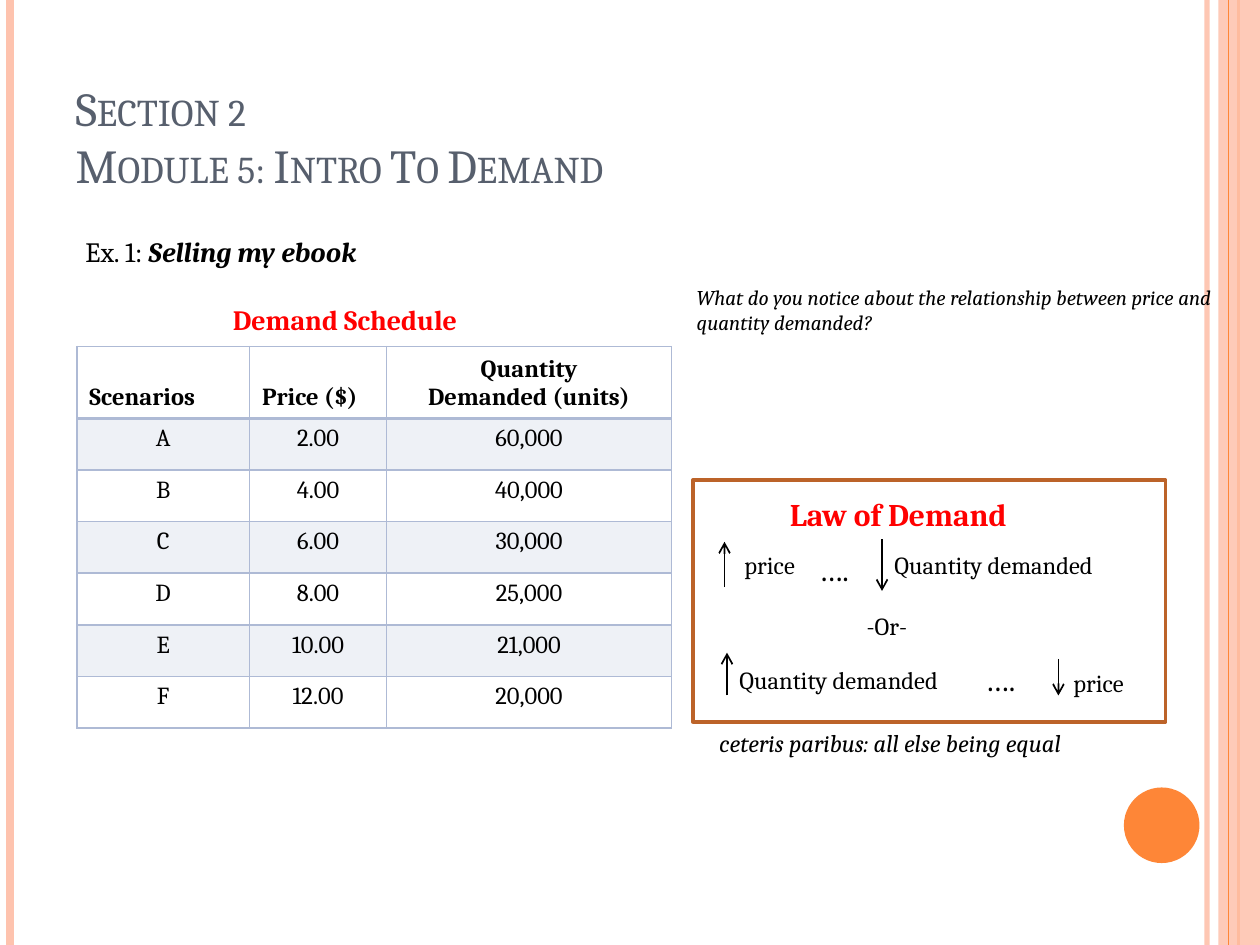
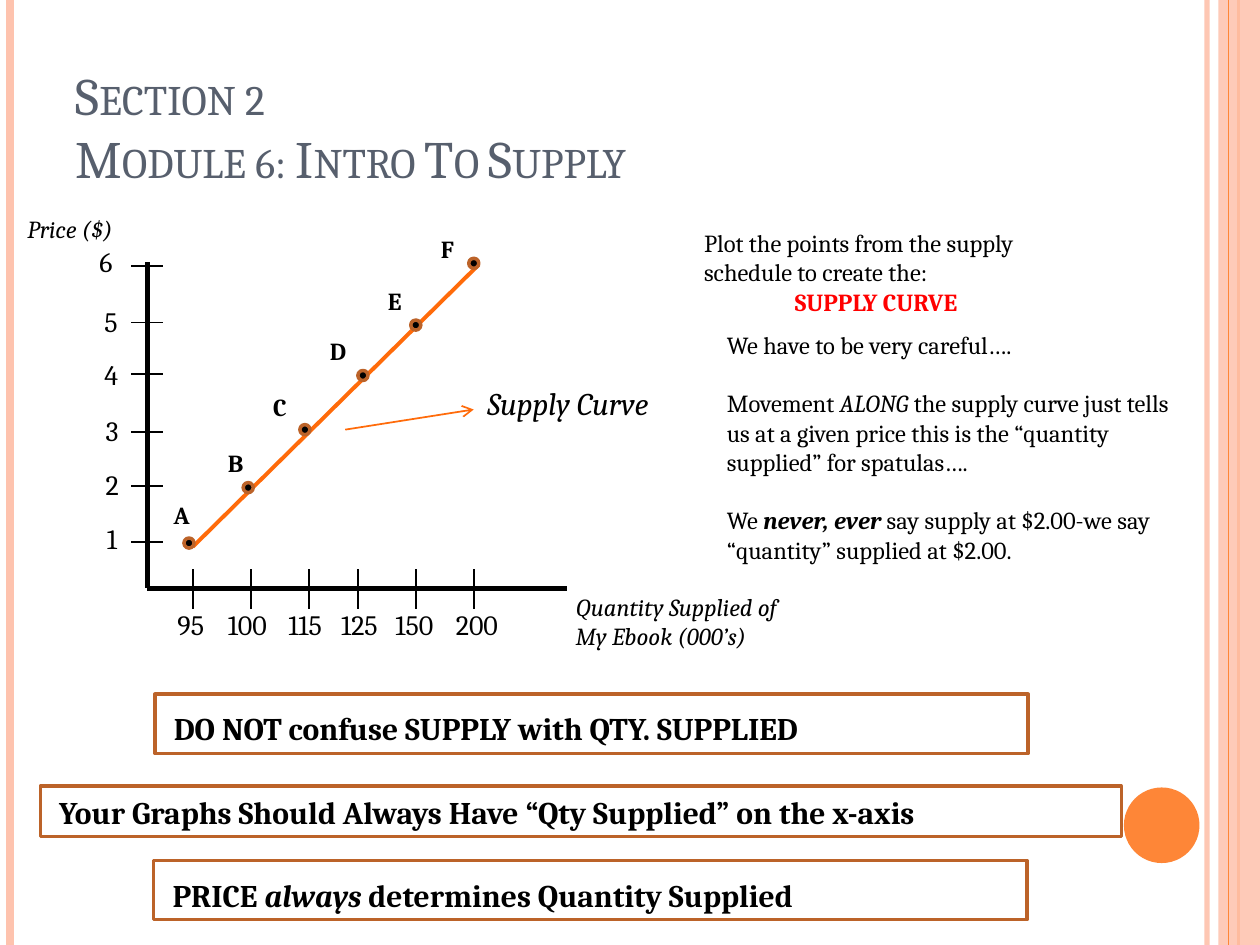
from lxml import etree
from pptx import Presentation
from pptx.dml.color import RGBColor
from pptx.enum.shapes import MSO_CONNECTOR, MSO_SHAPE
from pptx.enum.text import MSO_ANCHOR, MSO_AUTO_SIZE, PP_ALIGN
from pptx.oxml.ns import qn
from pptx.util import Inches, Pt

STRAIGHT = MSO_CONNECTOR.STRAIGHT
RECT, OVAL = MSO_SHAPE.RECTANGLE, MSO_SHAPE.OVAL
TOP, BOTTOM = MSO_ANCHOR.TOP, MSO_ANCHOR.BOTTOM
LEFT, CENTER = PP_ALIGN.LEFT, PP_ALIGN.CENTER
FIT, NO_FIT = MSO_AUTO_SIZE.SHAPE_TO_FIT_TEXT, MSO_AUTO_SIZE.NONE

FONT = "Cambria"
BLACK, RED, SLATE = "000000", "FF0000", "575F6D"
PEACH, ORANGE, CURVE, BROWN = "FEC3AE", "FE8637", "FF6B0A", "BC6329"
GRID = "AEBAD5"

SCHEDULE = [
    ("A", "2.00", "60,000"),
    ("B", "4.00", "40,000"),
    ("C", "6.00", "30,000"),
    ("D", "8.00", "25,000"),
    ("E", "10.00", "21,000"),
    ("F", "12.00", "20,000"),
]
# Offsets are measured right of and up from the corner of the axes.
POINTS = [("A", 0.33, 0.36, 0.11, 0.75), ("B", 0.8, 0.8, 0.54, 1.16),
          ("C", 1.25, 1.26, 0.9, 1.61), ("D", 1.71, 1.69, 1.35, 2.05),
          ("E", 2.13, 2.09, 1.81, 2.45), ("F", 2.59, 2.58, 2.23, 2.86)]
PRICE_TICKS = [("1", 0.37, -0.42, 0.58), ("2", 0.81, -0.43, 1.01),
               ("3", 1.24, -0.43, 1.44), ("4", 1.7, -0.44, 1.88),
               ("5", 2.11, -0.44, 2.3), ("6", 2.56, -0.48, 2.78)]
QTY_TICKS = [("95", 0.36, 0.14), ("100", 0.82, 0.54), ("115", 1.28, 1.02),
             ("125", 1.67, 1.44), ("150", 2.13, 1.87), ("200", 2.59, 2.35)]


def rgb(color):
    """Turn a hex string into a colour."""
    return RGBColor.from_string(color)


def fade(parent, percent):
    """Set the opacity of the solid fill directly inside an element."""
    color = parent.find(qn("a:solidFill"))[0]
    etree.SubElement(color, qn("a:alpha"), val=str(percent * 1000))


def write(tf, paras, size=14, color=BLACK, bold=False, italic=False,
          align=LEFT, gap=0, small=False):
    """Fill a text frame; a run is a string or a (string, format) pair."""
    for i, runs in enumerate(paras):
        p = tf.paragraphs[0] if i == 0 else tf.add_paragraph()
        p.alignment = align
        p.space_before = Pt(gap if i else 0)
        for run in [runs] if isinstance(runs, str) else runs:
            text, own = (run, {}) if isinstance(run, str) else run
            r = p.add_run()
            r.text = text
            r.font.name, r.font.size = FONT, Pt(size)
            r.font.bold = own.get("bold", bold)
            r.font.italic = own.get("italic", italic)
            r.font.color.rgb = rgb(own.get("color", color))
            if small:
                r.font._element.set("cap", "small")


def label(s, x, y, w, h, *paras, wrap=False, **fmt):
    """Add a text box that grows with its text."""
    tf = s.shapes.add_textbox(Inches(x), Inches(y), Inches(w), Inches(h)).text_frame
    tf.word_wrap = wrap
    tf.auto_size = FIT
    write(tf, paras, **fmt)
    return tf


def line(s, x1, y1, x2, y2, color=BLACK, width=1, arrow=False, alpha=None):
    """Add a straight line, with an arrowhead at its end if asked."""
    c = s.shapes.add_connector(STRAIGHT, Inches(x1), Inches(y1), Inches(x2), Inches(y2))
    c.line.color.rgb = rgb(color)
    c.line.width = Pt(width)
    sp_pr = c.element.spPr
    ln = sp_pr.find(qn("a:ln"))
    if alpha:
        fade(ln, alpha)
    if arrow:
        etree.SubElement(ln, qn("a:tailEnd"), type="arrow")
    etree.SubElement(sp_pr, qn("a:effectLst"))


def shape(s, kind, x, y, w, h, fill=None, outline=None):
    """Add a flat preset shape."""
    sp = s.shapes.add_shape(kind, Inches(x), Inches(y), Inches(w), Inches(h))
    sp.shadow.inherit = False
    if fill:
        sp.fill.solid()
        sp.fill.fore_color.rgb = rgb(fill)
    else:
        sp.fill.background()
    if outline:
        sp.line.color.rgb = rgb(outline)
        sp.line.width = Pt(2)
    else:
        sp.line.fill.background()
    return sp


def set_master(prs, s):
    """Draw the side bands and the disc, then move them to the master."""
    line(s, 9.58, 0, 9.58, 7.5, PEACH, 3, alpha=93)
    line(s, 0.08, 0, 0.08, 7.5, PEACH, 4.5)
    line(s, 9.83, 0, 9.83, 7.5, ORANGE, 1.5)
    band = shape(s, RECT, 9.67, 0, 0.33, 7.5, PEACH)
    fade(band.element.spPr, 87)
    line(s, 9.75, 0, 9.75, 7.5, ORANGE, 0.75)
    shape(s, OVAL, 8.92, 6.25, 0.6, 0.6, ORANGE)
    tree = prs.slide_master.shapes.element
    parts = [sp for sp in s.shapes if not sp.is_placeholder]
    for i, sp in enumerate(parts):
        sp.element.find(".//" + qn("p:cNvPr")).set("id", str(100 + i))
        tree.insert(2 + i, sp.element)


def set_title(s, y, size, *lines):
    """Place and fill the title."""
    sp = s.shapes.title
    sp.left, sp.top, sp.width, sp.height = Inches(0.5), Inches(y), Inches(8.17), Inches(1.25)
    tf = sp.text_frame
    tf.word_wrap = True
    tf.auto_size = NO_FIT
    tf.vertical_anchor = BOTTOM
    write(tf, lines, size=size, color=SLATE, small=True)


def set_cell(cell, paras, row):
    """Fill a schedule cell with its text, borders and band."""
    header = row == 0
    cell.vertical_anchor = BOTTOM if header else TOP
    align = LEFT if header and len(paras) == 1 else CENTER
    write(cell.text_frame, paras, bold=header, align=align)
    tc_pr = cell._tc.get_or_add_tcPr()
    heavy = {0: "lnB", 1: "lnT"}.get(row)
    for side in ("lnL", "lnR", "lnT", "lnB"):
        ln = etree.SubElement(tc_pr, qn("a:" + side), w=str(Pt(2 if side == heavy else 1)))
        fill = etree.SubElement(ln, qn("a:solidFill"))
        etree.SubElement(fill, qn("a:srgbClr"), val=GRID)
    if row % 2:
        cell.fill.solid()
        cell.fill.fore_color.rgb = rgb(GRID)
        fade(tc_pr, 20)
    else:
        cell.fill.background()


def add_schedule(s, x, y):
    """Add the demand schedule with its heading."""
    label(s, x + 1.14, y - 0.4, 2.31, 0.37, "Demand Schedule", size=16, color=RED, bold=True)
    table = s.shapes.add_table(len(SCHEDULE) + 1, 3, Inches(x), Inches(y),
                               Inches(4.72), Inches(3)).table
    table.first_row = table.horz_banding = False
    for col, w in zip(table.columns, (1.37, 1.09, 2.26)):
        col.width = Inches(w)
    for i, row in enumerate(table.rows):
        row.height = Inches(0.41 if i else 0.57)
    header = (["Scenarios"], ["Price ($)"], ["Quantity", "Demanded (units)"])
    rows = [header] + [[[text] for text in values] for values in SCHEDULE]
    for i, values in enumerate(rows):
        for j, paras in enumerate(values):
            set_cell(table.cell(i, j), paras, i)


def add_law(s, x, y):
    """Add the framed law of demand."""
    label(s, x + 0.67, y + 0.07, 2.25, 0.4, "Law of Demand", size=18, color=RED, bold=True)
    for dx, start, end in ((0.25, 0.85, 0.49), (1.5, 0.47, 0.88),
                           (0.27, 1.71, 1.37), (2.9, 1.42, 1.71)):
        line(s, x + dx, y + start, x + dx, y + end, arrow=True)
    for dx, dy in ((0.31, 0.51), (2.92, 1.44)):
        label(s, x + dx, y + dy, 0.65, 0.34, "price")
    for dx, dy in ((1.5, 0.51), (0.27, 1.42)):
        label(s, x + dx, y + dy, 2.01, 0.34, "Quantity demanded")
    for dx, dy in ((0.9, 0.51), (2.22, 1.38)):
        label(s, x + dx, y + dy, 0.52, 0.4, "….", size=18)
    label(s, x + 1.28, y + 0.99, 0.57, 0.34, "-Or-")
    shape(s, RECT, x, y, 3.75, 1.92, outline=BROWN)
    label(s, x + 0.11, y + 1.92, 3.39, 0.34, "ceteris paribus: all else being equal", italic=True)


def add_supply_graph(s, x, y):
    """Draw the supply curve, with the corner of the axes at x, y."""
    line(s, x + 0.36, y - 0.33, x + 2.63, y - 2.57, CURVE, 2.25)
    for name, dx, up, label_dx, label_up in POINTS:
        shape(s, OVAL, x + dx - 0.04, y - up - 0.04, 0.08, 0.08, BLACK, BROWN)
        label(s, x + label_dx, y - label_up, 0.35, 0.34, name, bold=True)
    line(s, x, y - 2.59, x, y, width=3)
    line(s, x, y, x + 3.33, y, width=3)
    for price, up, label_dx, label_up in PRICE_TICKS:
        line(s, x - 0.13, y - up, x + 0.12, y - up)
        label(s, x + label_dx, y - label_up, 0.33, 0.37, price, size=16)
    for qty, dx, label_dx in QTY_TICKS:
        line(s, x + dx, y - 0.15, x + dx, y + 0.16)
        label(s, x + label_dx, y + 0.1, 0.19 + 0.13 * len(qty), 0.37, qty, size=16)
    label(s, x - 1.05, y - 3.02, 0.96, 0.34, "Price ($)", italic=True)
    label(s, x + 3.3, y - 0.02, 2.09, 0.57, "Quantity Supplied of", "My Ebook (000’s)", italic=True)
    line(s, x + 1.57, y - 1.26, x + 2.59, y - 1.42, CURVE, arrow=True)
    label(s, x + 2.6, y - 1.67, 1.8, 0.4, "Supply Curve", size=18, italic=True)


def add_supply_notes(s, x, y):
    """Add the notes beside the graph."""
    tf = label(s, x, y, 3.33, 0.81, "Plot the points from the supply schedule to create the:",
               [("SUPPLY CURVE", {"color": RED, "bold": True})], wrap=True)
    tf.paragraphs[1]._p.get_or_add_pPr().set("marL", str(Inches(0.72)))
    label(s, x + 0.18, y + 0.81, 3.92, 1.99,
          "We have to be very careful….",
          ["Movement ", ("ALONG", {"italic": True}),
           " the supply curve just tells us at a given price this is the "
           "“quantity supplied” for spatulas…."],
          ["We ", ("never, ever ", {"bold": True, "italic": True}),
           "say supply at $2.00-we say “quantity” supplied at $2.00."],
          wrap=True, gap=16.5)


def add_reminder(s, x, y, w, h, *runs):
    """Add a framed reminder."""
    tf = shape(s, RECT, x, y, w, h, outline=BROWN).text_frame
    tf.word_wrap = True
    tf.vertical_anchor = BOTTOM
    tf.margin_left = Inches(0.15)
    write(tf, [runs], size=18, bold=True)


def build_demand(s):
    """Build the demand slide."""
    set_title(s, 0.33, 27, "Section 2", "Module 5: Intro To Demand")
    label(s, 0.58, 1.81, 2.92, 0.37,
          ["Ex. 1: ", ("Selling my ebook", {"bold": True, "italic": True})], size=16)
    add_schedule(s, 0.61, 2.75)
    label(s, 5.43, 2.21, 4.32, 0.5,
          "What do you notice about the relationship between price and quantity demanded?",
          wrap=True, size=12, italic=True)
    add_law(s, 5.5, 3.81)


def build_supply(s):
    """Build the supply slide."""
    set_title(s, 0.3, 30, "Section 2", "Module 6: Intro To Supply")
    add_supply_graph(s, 1.17, 4.67)
    add_supply_notes(s, 5.49, 1.76)
    add_reminder(s, 1.23, 5.51, 6.93, 0.47, "DO NOT confuse SUPPLY with QTY. SUPPLIED")
    add_reminder(s, 0.32, 6.24, 8.58, 0.4,
                 "Your Graphs Should Always Have “Qty Supplied” on the x-axis")
    add_reminder(s, 1.22, 6.83, 6.93, 0.47, "PRICE ", ("always", {"italic": True}),
                 " determines Quantity Supplied")


def main():
    """Build and save the presentation."""
    prs = Presentation()
    prs.slide_width, prs.slide_height = Inches(10), Inches(7.5)
    title_only = prs.slide_layouts[5]
    demand, supply = [prs.slides.add_slide(title_only) for _ in range(2)]
    set_master(prs, demand)
    build_demand(demand)
    build_supply(supply)
    prs.save("out.pptx")


if __name__ == "__main__":
    main()
